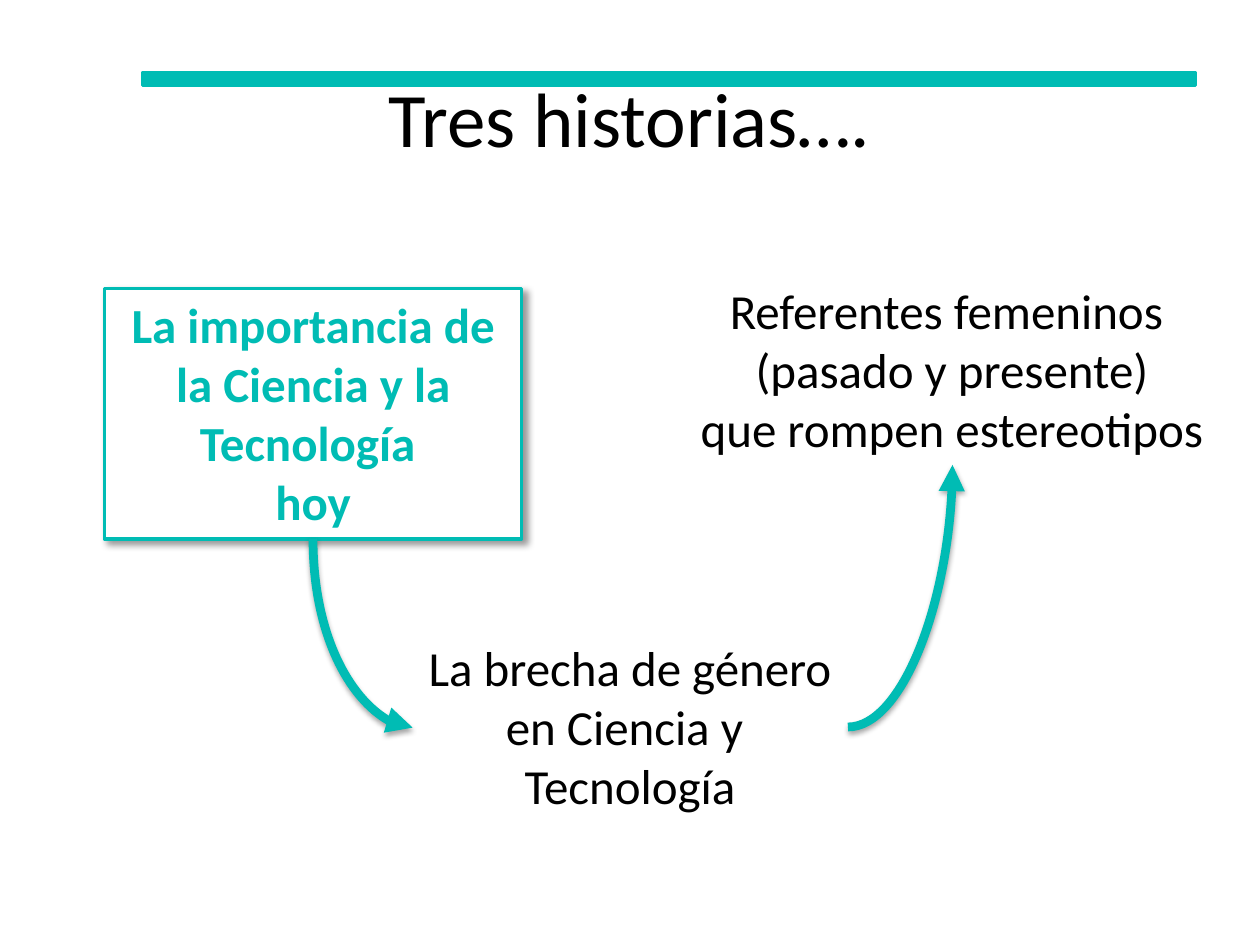
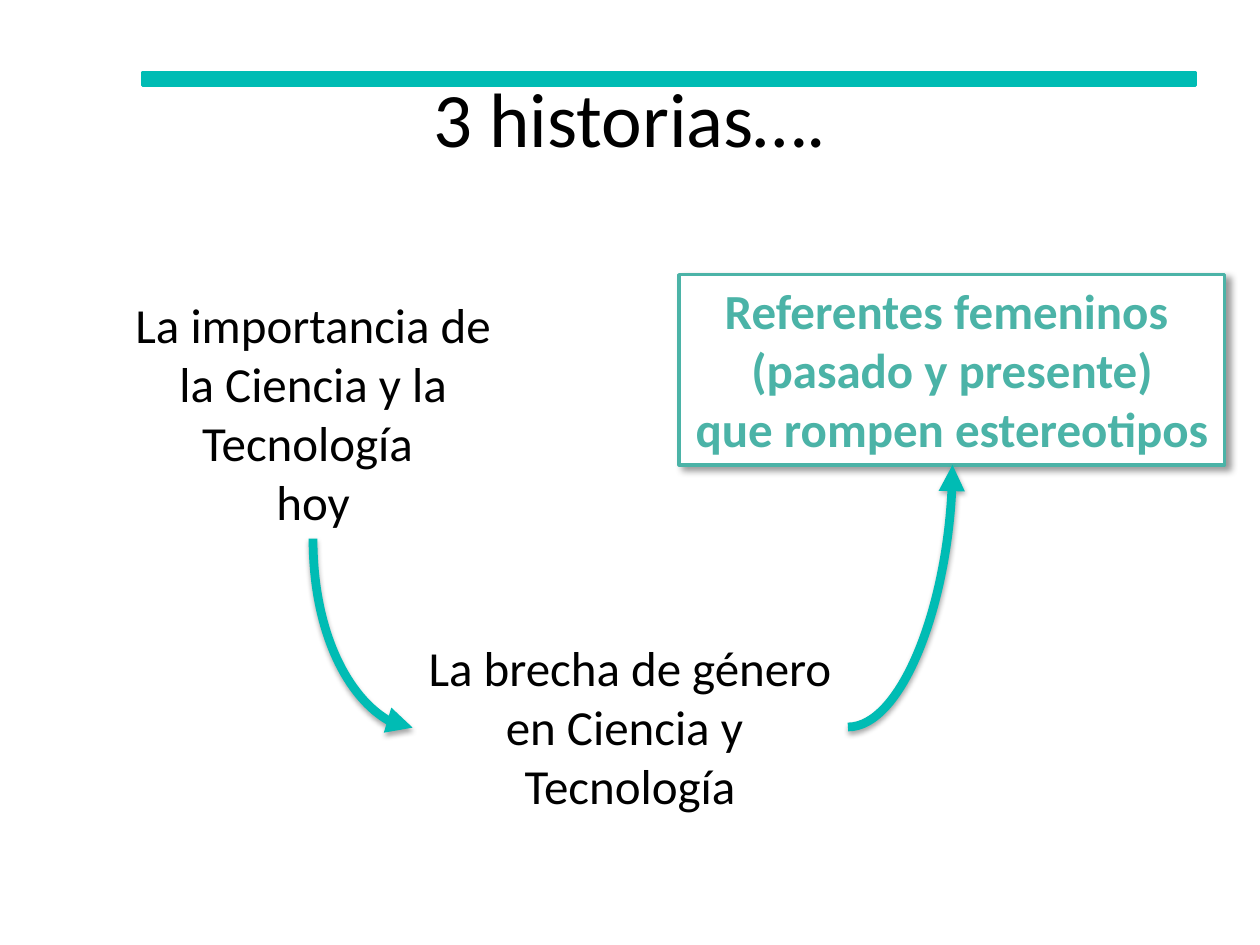
from lxml.etree import SubElement
from pptx import Presentation
from pptx.dml.color import RGBColor
from pptx.enum.shapes import MSO_CONNECTOR, MSO_SHAPE
from pptx.enum.text import MSO_ANCHOR, MSO_AUTO_SIZE, PP_ALIGN
from pptx.oxml.ns import qn
from pptx.util import Inches, Pt

prs = Presentation()
prs.slide_width, prs.slide_height = Inches(10), Inches(7.5)

rgb = RGBColor.from_string
TEAL, SOFT_TEAL, BLACK, WHITE = "00BCB4", "4BB3A7", "000000", "FFFFFF"
FONT = "Calibri"


def place(*shares):
    """Turn x, y, x, y... in percent of the slide into lengths."""
    sides = (prs.slide_width, prs.slide_height)
    return [round(share * sides[i % 2] / 100) for i, share in enumerate(shares)]


def add_shadow(sp, alpha, blur, dist, angle):
    effects = SubElement(sp._element.spPr, qn("a:effectLst"))
    shadow = SubElement(effects, qn("a:outerShdw"), blurRad=str(Pt(blur)),
                        dist=str(Pt(dist)), dir=str(angle * 60000), rotWithShape="0")
    clr = SubElement(shadow, qn("a:srgbClr"), val=BLACK)
    SubElement(clr, qn("a:alpha"), val=str(alpha * 1000))


# The three stories: text and box
stories = [
    ("La importancia de la Ciencia y la Tecnología \nhoy", (8.3, 30.53, 33.1, 26.53)),
    ("La brecha de género \nen Ciencia y \nTecnología", (32.7, 66.8, 34.6, 20.13)),
    ("Referentes femeninos \n(pasado y presente)\nque rompen estereotipos",
     (53.9, 29.07, 43.3, 20.13)),
]
# Curved arrows: begin and end before turning, then rotation in degrees
arrows = [((36.3, 61.73, 21.3, 72.27), 270), ((67.3, 76.93, 75.6, 49.2), 0)]
# Slides: title, highlighted story and its colour
slides = [("Tres historias….", 0, TEAL), ("3 historias….", 2, SOFT_TEAL)]

for title, highlighted, accent in slides:
    s = prs.slides.add_slide(prs.slide_layouts[6])

    # Top band
    band = s.shapes.add_shape(MSO_SHAPE.RECTANGLE, *place(11.3, 7.73, 83.6, 1.33))
    band.shadow.inherit = False
    band.fill.solid()
    band.fill.fore_color.rgb = rgb(TEAL)
    band.line.color.rgb = rgb(TEAL)
    band.line.width = Pt(2)

    # Title
    tf = s.shapes.add_textbox(*place(5, 4, 90, 16.67)).text_frame
    tf.word_wrap = True
    tf.vertical_anchor = MSO_ANCHOR.MIDDLE
    tf.text = title
    p = tf.paragraphs[0]
    p.alignment = PP_ALIGN.CENTER
    p.font.name, p.font.size = FONT, Pt(44)
    p.font.color.rgb = rgb(BLACK)

    # Stories, one of them framed
    for i, (text, box) in enumerate(stories):
        framed = i == highlighted
        sp = s.shapes.add_textbox(*place(*box))
        tf = sp.text_frame
        tf.word_wrap = True
        tf.auto_size = MSO_AUTO_SIZE.SHAPE_TO_FIT_TEXT
        tf.text = text
        for p in tf.paragraphs:
            p.alignment = PP_ALIGN.CENTER
            p.font.name, p.font.size, p.font.bold = FONT, Pt(28), framed
            p.font.color.rgb = rgb(accent if framed else BLACK)
        if framed:
            sp.fill.solid()
            sp.fill.fore_color.rgb = rgb(WHITE)
            sp.line.color.rgb = rgb(accent)
            sp.line.width = Pt(2)
            add_shadow(sp, 40, 4, 3, 45)

    # Arrows between the stories
    for ends, rotation in arrows:
        arrow = s.shapes.add_connector(MSO_CONNECTOR.CURVE, *place(*ends))
        arrow.line.color.rgb = rgb(TEAL)
        arrow.line.width = Pt(5)
        spPr = arrow._element.spPr
        spPr.find(qn("a:prstGeom")).set("prst", "curvedConnector2")
        spPr.find(qn("a:xfrm")).set("rot", str(rotation * 60000))
        SubElement(spPr.find(qn("a:ln")), qn("a:tailEnd"), type="triangle")
        add_shadow(arrow, 35, 3.1, 1.8, 90)

prs.save("out.pptx")
